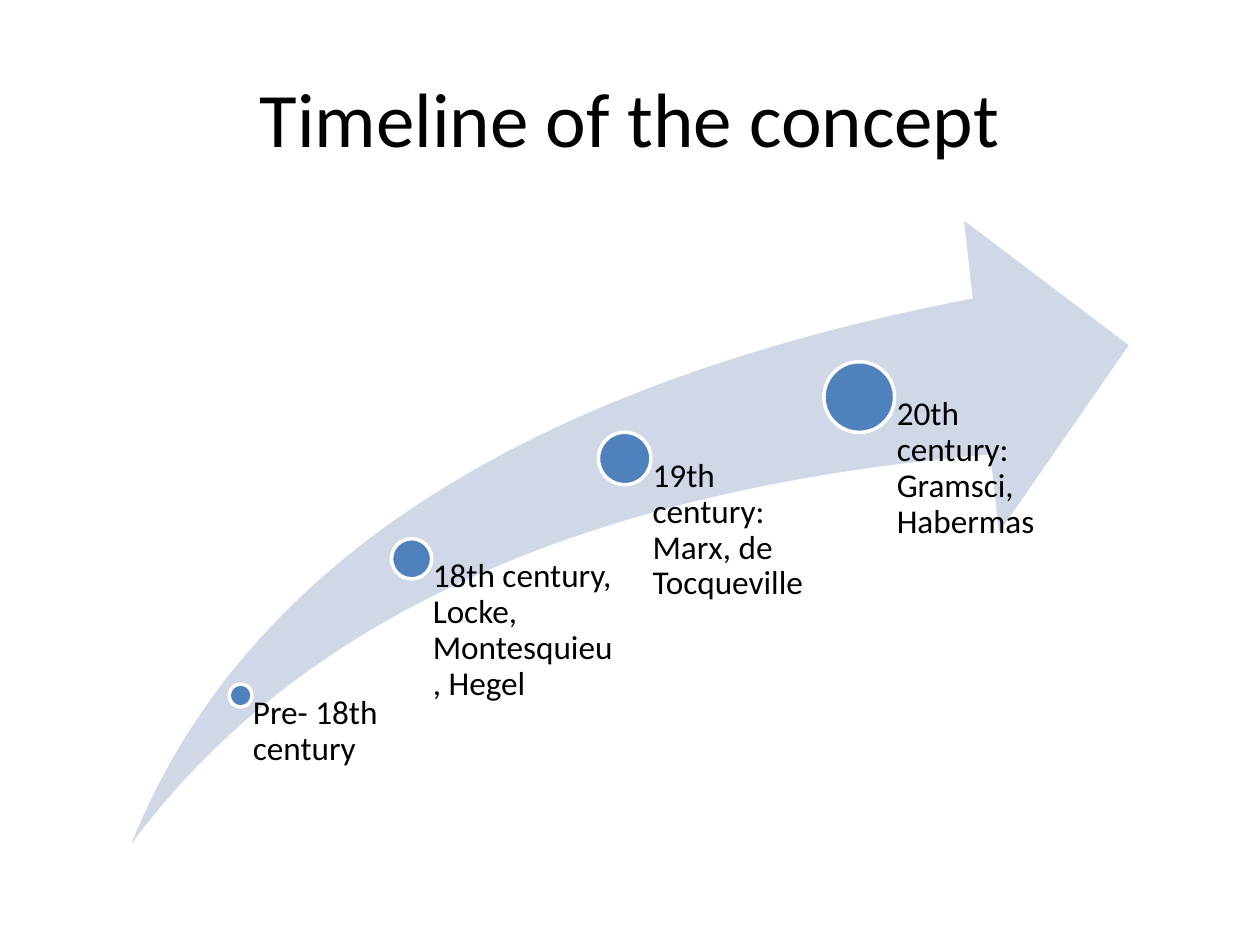
from dataclasses import dataclass

from pptx import Presentation
from pptx.dml.color import RGBColor as RGB
from pptx.enum.shapes import MSO_SHAPE as Shape
from pptx.enum.text import MSO_ANCHOR as Anchor, PP_ALIGN as Align
from pptx.util import Pt


@dataclass(frozen=True)
class Theme:
    font: str = "Calibri"
    text: RGB = RGB(0x00, 0x00, 0x00)
    arrow: RGB = RGB(0xD0, 0xD8, 0xE8)
    dot: RGB = RGB(0x4F, 0x81, 0xBD)
    outline: RGB = RGB(0xFF, 0xFF, 0xFF)
    title_size: int = 44
    label_size: int = 19


THEME = Theme()
ARROW = (75, 126, 570, 356.4)  # left, top, width, height
BOTTOM = ARROW[1] + ARROW[3]

# Dot centre x and y, dot diameter, label width, label inset, label
MILESTONES = [
    (137.5, 397.4, 13, 97.2, 7, "Pre- 18th century"),
    (235.2, 319.3, 23, 119.5, 12.2, "18th century, Locke, Montesquieu, Hegel"),
    (357, 262, 30, 119.5, 16, "19th century: Marx, de Tocqueville"),
    (491, 226.9, 40.4, 119.5, 21.5, "20th century: Gramsci, Habermas"),
]


def set_all(obj, values):
    for name, value in values.items():
        setattr(obj, name, value)


def place(sp, left, top, width, height):
    set_all(sp, {"left": Pt(left), "top": Pt(top),
                 "width": Pt(width), "height": Pt(height)})


def write(tf, text, size, para_format):
    tf.word_wrap = True
    p = tf.paragraphs[0]
    set_all(p, para_format)
    r = p.add_run()
    r.text = text
    set_all(r.font, {"name": THEME.font, "size": Pt(size)})
    r.font.color.rgb = THEME.text


def add_title(s, text):
    sp = s.shapes.title
    place(sp, 36, 21.6, 648, 90)
    sp.text_frame.vertical_anchor = Anchor.MIDDLE
    write(sp.text_frame, text, THEME.title_size, {"alignment": Align.CENTER})


def add_filled(shapes, kind, box, color):
    sp = shapes.add_shape(kind, *map(Pt, box))
    sp.shadow.inherit = False
    sp.fill.solid()
    sp.fill.fore_color.rgb = color
    sp.line.fill.background()
    return sp


def add_arrow(shapes):
    sp = add_filled(shapes, Shape.SWOOSH_ARROW, ARROW, THEME.arrow)
    for i in range(2):
        sp.adjustments[i] = 0.25


def add_milestone(shapes, x, y, size, width, inset, text):
    dot = add_filled(shapes, Shape.OVAL,
                     (x - size / 2, y - size / 2, size, size), THEME.dot)
    dot.line.color.rgb = THEME.outline
    dot.line.width = Pt(2)

    # The label hangs from the dot's centre down to the arrow's foot
    tf = shapes.add_textbox(*map(Pt, (x, y, width, BOTTOM - y))).text_frame
    set_all(tf, {"margin_left": Pt(inset), "margin_top": 0,
                 "margin_right": 0, "margin_bottom": 0,
                 "vertical_anchor": Anchor.TOP})
    write(tf, text, THEME.label_size,
          {"alignment": Align.LEFT, "line_spacing": 0.9})


def main():
    prs = Presentation()
    set_all(prs, {"slide_width": Pt(720), "slide_height": Pt(540)})
    s = prs.slides.add_slide(prs.slide_layouts[5])

    # Title
    add_title(s, "Timeline of the concept")

    # Rising arrow with its milestones
    shapes = s.shapes.add_group_shape().shapes
    add_arrow(shapes)
    for milestone in MILESTONES:
        add_milestone(shapes, *milestone)

    prs.save("out.pptx")


if __name__ == "__main__":
    main()
